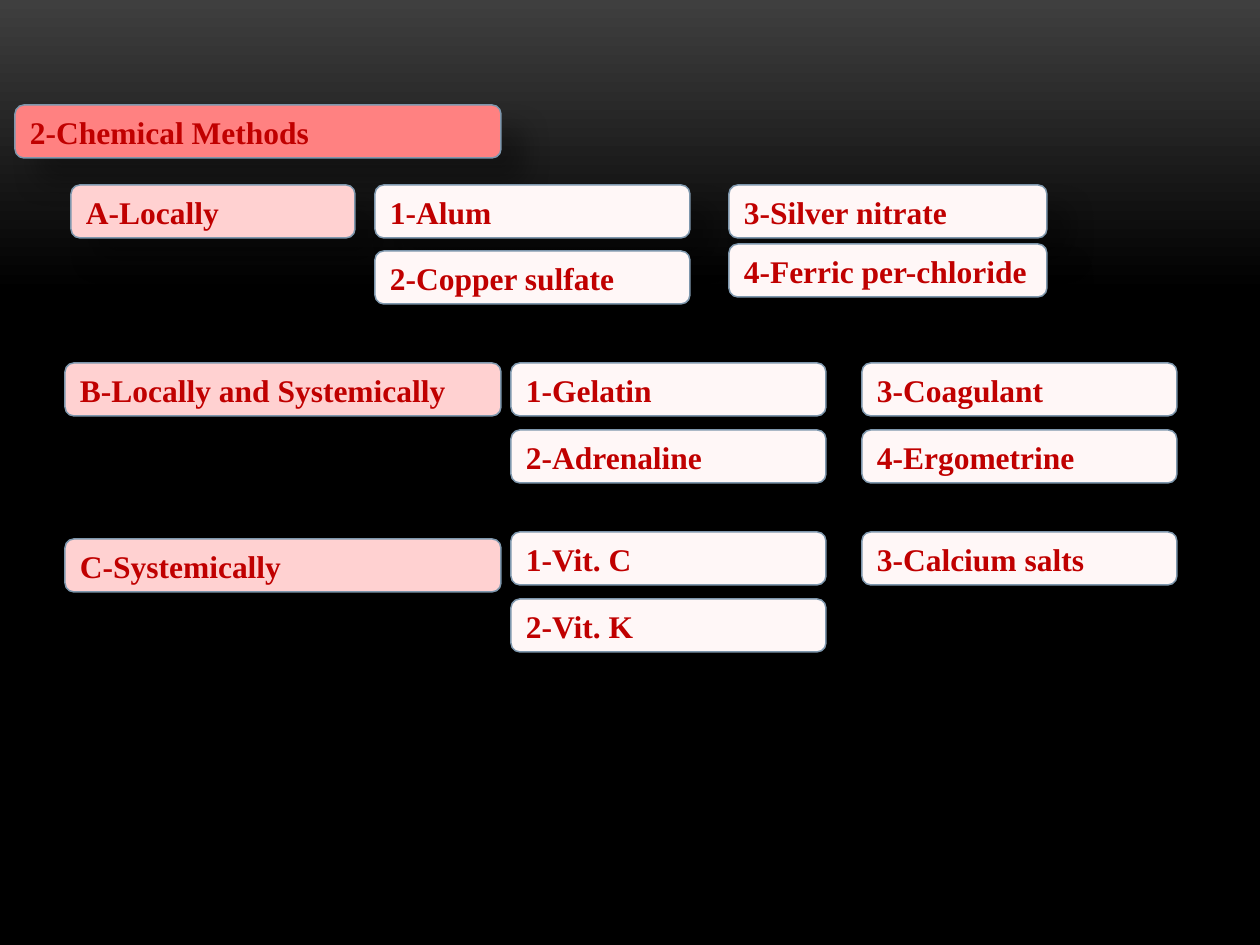
"""Build the slide on chemical methods as headed groups of labelled boxes."""
from lxml.etree import SubElement
from pptx import Presentation
from pptx.dml.color import RGBColor as RGB
from pptx.enum.shapes import MSO_SHAPE as SHAPE
from pptx.enum.text import MSO_ANCHOR as ANCHOR, PP_ALIGN as ALIGN
from pptx.oxml.ns import qn
from pptx.util import Emu, Pt

PX = 914400 // 126
BOX_H = 53
COLORS = {
    "title": "FF8181", "group": "FFD1D1", "item": "FFF7F7",
    "text": "C00000", "line": "7E97AD", "shadow": "000000",
    "bg_top": "3F3F3F", "bg_bottom": "000000",
}
TITLE = ("2-Chemical Methods", 15, 105, 486)
GROUPS = [
    {"head": ("A-Locally", 71, 185, 284), "top": 185,
     "columns": [(375, 315, 66, ["1-Alum", "2-Copper sulfate"]),
                 (729, 318, 59, ["3-Silver nitrate", "4-Ferric per-chloride"])]},
    {"head": ("B-Locally and Systemically", 65, 363, 436), "top": 363,
     "columns": [(511, 315, 67, ["1-Gelatin", "2-Adrenaline"]),
                 (862, 315, 67, ["3-Coagulant", "4-Ergometrine"])]},
    {"head": ("C-Systemically", 65, 539, 436), "top": 532,
     "columns": [(511, 315, 67, ["1-Vit. C", "2-Vit. K"]),
                 (862, 315, 67, ["3-Calcium salts"])]},
]


def color(name):
    return RGB.from_string(COLORS[name])


def add_shadow(sp):
    sp.shadow.inherit = False
    effects = sp._element.spPr.find(qn("a:effectLst"))
    outer = SubElement(effects, qn("a:outerShdw"), blurRad=str(Pt(15)),
                       dist=str(Pt(18)), dir=str(45 * 60000), rotWithShape="0")
    rgb = SubElement(outer, qn("a:srgbClr"), val=COLORS["shadow"])
    SubElement(rgb, qn("a:alpha"), val="30000")


def add_box(s, kind, text, x, y, w):
    sp = s.shapes.add_shape(SHAPE.ROUNDED_RECTANGLE,
                            *(Emu(v * PX) for v in (x, y, w, BOX_H)))
    sp.fill.solid()
    sp.fill.fore_color.rgb = color(kind)
    sp.line.color.rgb = color("line")
    sp.line.width = Pt(0.85)
    add_shadow(sp)
    tf = sp.text_frame
    tf.word_wrap = True
    tf.vertical_anchor = ANCHOR.MIDDLE
    p = tf.paragraphs[0]
    p.text = text
    p.alignment = ALIGN.LEFT
    p.font.name = "Times New Roman"
    p.font.size = Pt(18)
    p.font.bold = True
    p.font.color.rgb = color("text")


def set_background(s):
    fill = s.background.fill
    fill.gradient()
    fill.gradient_angle = 270
    stops = (("bg_top", 0), ("bg_bottom", 0.31))
    for stop, (name, position) in zip(fill.gradient_stops, stops):
        stop.color.rgb = color(name)
        stop.position = position


def main():
    prs = Presentation()
    prs.slide_width, prs.slide_height = Emu(1260 * PX), Emu(945 * PX)
    s = prs.slides.add_slide(prs.slide_layouts[6])
    set_background(s)
    add_box(s, "title", *TITLE)
    for group in GROUPS:
        add_box(s, "group", *group["head"])
        for x, w, pitch, items in group["columns"]:
            for row, text in enumerate(items):
                add_box(s, "item", text, x, group["top"] + row * pitch, w)
    prs.save("out.pptx")


if __name__ == "__main__":
    main()
